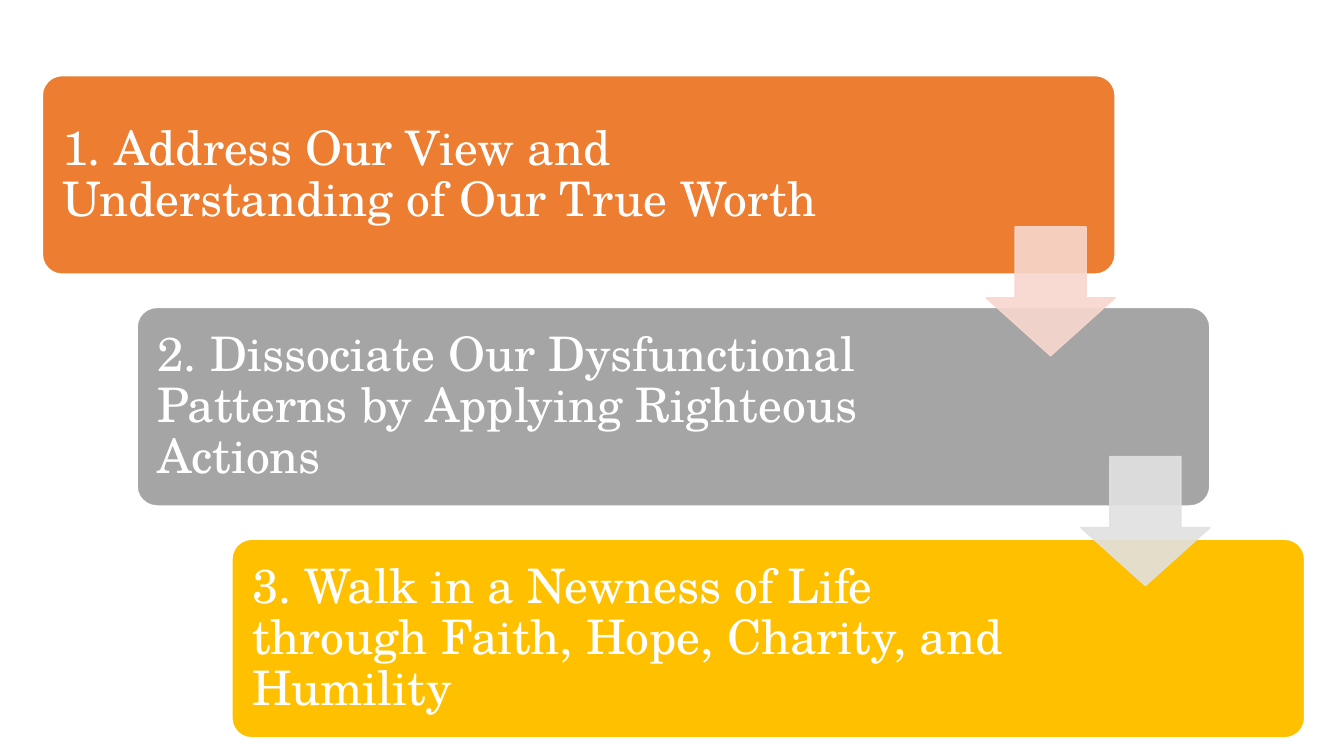
"""Build a slide of three descending steps joined by arrows."""
import pptx
import pptx.dml.color
import pptx.enum.shapes
import pptx.enum.text
import pptx.oxml.ns
import pptx.util
from lxml import etree

Inches = pptx.util.Inches
Pt = pptx.util.Pt
SHAPES = pptx.enum.shapes.MSO_SHAPE

COLORS = {
    "white": "FFFFFF",
    "orange": "ED7D31",
    "gray": "A5A5A5",
    "gold": "FFC000",
    "pale_orange": "F8D7CE",
    "pale_gray": "E1E1E1",
}
STEPS = [
    ("1. Address Our View and Understanding of Our True Worth", "orange", 8.51),
    ("2. Dissociate Our Dysfunctional Patterns by Applying Righteous Actions", "gray", 8.3),
    ("3. Walk in a Newness of Life through Faith, Hope, Charity, and Humility", "gold", 8.3),
]
ARROWS = [("pale_orange", 2.25), ("pale_gray", 4.53)]
LEFT, TOP = 0.42, 0.75
SHIFT, DROP = 0.94, 2.3
INSET = 0.06


def rgb(color):
    return pptx.dml.color.RGBColor.from_string(COLORS[color])


def add_block(slide, kind, box, adjustments, fill, outline, opacity=100):
    block = slide.shapes.add_shape(kind, *map(Inches, box))
    block.shadow.inherit = False
    for index, value in enumerate(adjustments):
        block.adjustments[index] = value
    block.fill.solid()
    block.fill.fore_color.rgb = rgb(fill)
    block.line.color.rgb = rgb(outline)
    block.line.width = Pt(1)
    if opacity < 100:
        for tint in block._element.spPr.iter(pptx.oxml.ns.qn("a:srgbClr")):
            alpha = etree.SubElement(tint, pptx.oxml.ns.qn("a:alpha"))
            alpha.set("val", str(opacity * 1000))


def add_text(slide, text, box, size=34, font="TeX Gyre Schola", color="white",
             margin=0.14, line_spacing=0.9):
    frame = slide.shapes.add_textbox(*map(Inches, box)).text_frame
    frame.word_wrap = True
    frame.vertical_anchor = pptx.enum.text.MSO_ANCHOR.MIDDLE
    frame.margin_left = frame.margin_right = Inches(margin)
    frame.margin_top = frame.margin_bottom = Inches(margin)
    paragraph = frame.paragraphs[0]
    paragraph.line_spacing = line_spacing
    run = paragraph.add_run()
    run.text = text
    run.font.size = Pt(size)
    run.font.name = font
    run.font.color.rgb = rgb(color)


def add_step(slide, index, text, fill, text_width):
    left, top = LEFT + index * SHIFT, TOP + index * DROP
    add_block(slide, SHAPES.ROUNDED_RECTANGLE, (left, top, 10.64, 1.97),
              [0.1], fill, "white")
    add_text(slide, text, (left + INSET, top + INSET, text_width, 1.86))


def main():
    deck = pptx.Presentation()
    deck.slide_width, deck.slide_height = Inches(13.33), Inches(7.5)
    slide = deck.slides.add_slide(deck.slide_layouts[6])
    for index, step in enumerate(STEPS):
        add_step(slide, index, *step)
    for index, (tint, top) in enumerate(ARROWS):
        add_block(slide, SHAPES.DOWN_ARROW, (9.78 + index * SHIFT, top, 1.28, 1.28),
                  [0.55, 0.45], tint, tint, opacity=90)
    deck.save("out.pptx")


if __name__ == "__main__":
    main()
